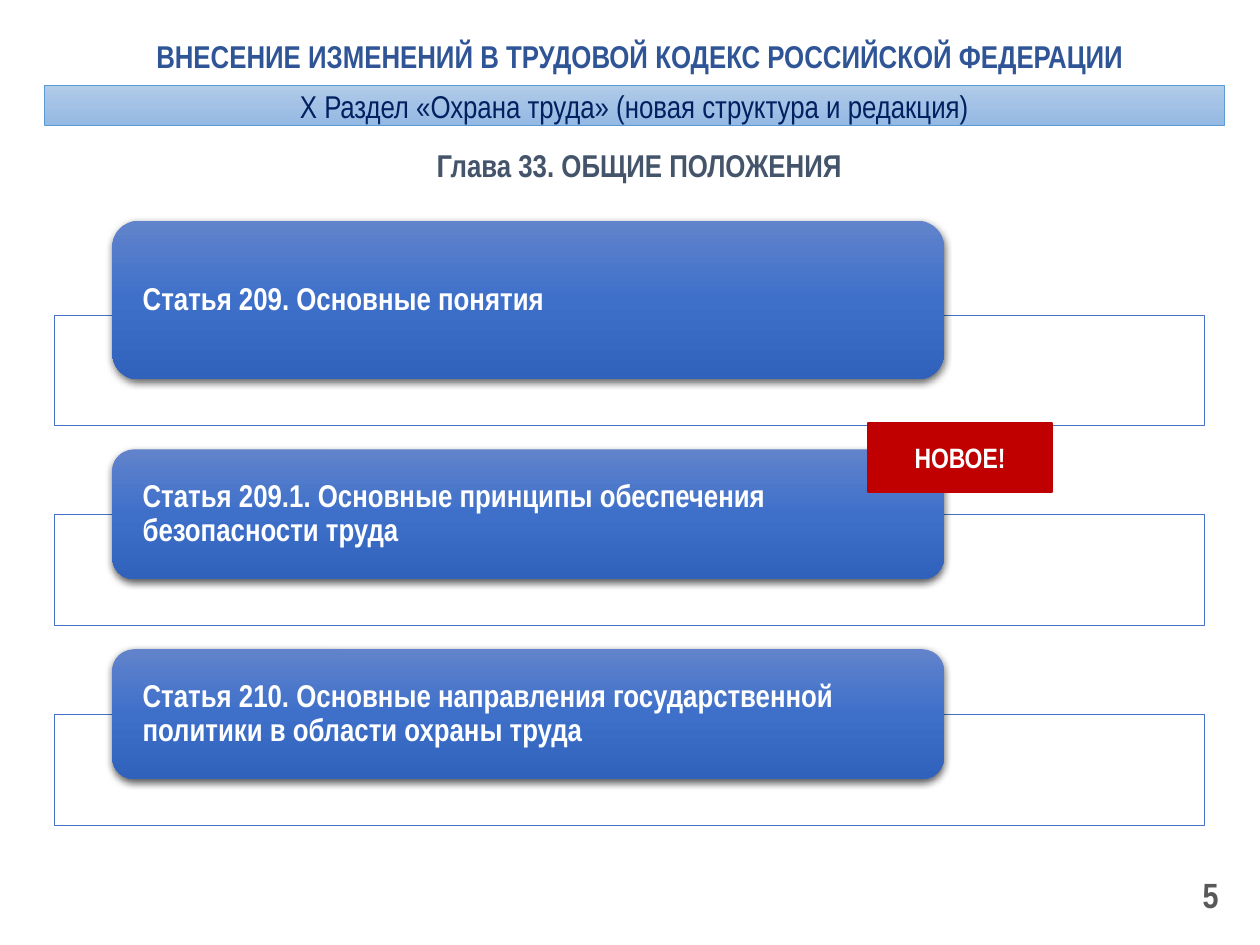
import copy
from dataclasses import dataclass

import pptx
import pptx.dml.color
import pptx.enum.shapes
import pptx.enum.text
import pptx.oxml
import pptx.oxml.ns
import pptx.util

Pt = pptx.util.Pt
RGB = pptx.dml.color.RGBColor.from_string
Shape = pptx.enum.shapes.MSO_SHAPE
Align = pptx.enum.text.PP_ALIGN
Anchor = pptx.enum.text.MSO_ANCHOR
qn = pptx.oxml.ns.qn


@dataclass(frozen=True)
class Theme:
    font: str = "Arial Narrow"
    title: str = "2F5597"
    section: str = "002060"
    chapter: str = "44546A"
    number: str = "595959"
    white: str = "FFFFFF"
    new: str = "C00000"
    frame_line: str = "4472C4"
    band_line: str = "5B9BD5"
    card_fill: tuple = ("6183CB", "3E70CA", "3062BB")
    band_fill: tuple = ("B1CBE9", "A3C1E5", "93B9E4")
    text_size: int = 18
    badge_size: int = 16
    number_size: int = 20


THEME = Theme()
ARTICLES = [
    ("Статья 209. Основные понятия", 90.7),
    ("Статья 209.1. Основные принципы обеспечения безопасности труда", 74.2),
    ("Статья 210. Основные направления государственной политики "
     "в области охраны труда", 74.2),
]


def lengths(box):
    return [Pt(value) for value in box]


def write(shape, text, color, size=THEME.text_size, align=Align.CENTER, bold=True):
    frame = shape.text_frame
    frame.word_wrap = True
    frame.auto_size = pptx.enum.text.MSO_AUTO_SIZE.NONE
    frame.vertical_anchor = Anchor.MIDDLE
    frame.text = text
    para = frame.paragraphs[0]
    para.alignment = align
    para.font.name = THEME.font
    para.font.size = Pt(size)
    para.font.bold = bold
    para.font.color.rgb = RGB(color)
    return para


def add_label(page, box, text, color, **style):
    write(page.shapes.add_textbox(*lengths(box)), text, color, **style)


def add_block(page, kind, box, fill=None, line=None, weight=0.5):
    shape = page.shapes.add_shape(kind, *lengths(box))
    shape.shadow.inherit = False
    if fill:
        shape.fill.solid()
        shape.fill.fore_color.rgb = RGB(fill)
    if line:
        shape.line.color.rgb = RGB(line)
        shape.line.width = Pt(weight)
    else:
        shape.line.fill.background()
    return shape


def fill_downwards(shape, colors):
    """Blend three colours from top to bottom."""
    shape.fill.gradient()
    shape.fill.gradient_angle = 270
    stops = shape._element.spPr.find(".//" + qn("a:gsLst"))
    stops.insert(1, copy.deepcopy(stops[0]))
    for stop, position, color in zip(shape.fill.gradient_stops, (0, 0.5, 1), colors):
        stop.position = position
        stop.color.rgb = RGB(color)


def add_soft_shadow(shape):
    effects = shape._element.spPr.find(qn("a:effectLst"))
    effects.append(pptx.oxml.parse_xml(
        f'<a:outerShdw {pptx.oxml.ns.nsdecls("a")} blurRad="{Pt(4.5)}" '
        f'dist="{Pt(1.5)}" dir="5400000" algn="ctr" rotWithShape="0">'
        '<a:srgbClr val="000000"><a:alpha val="63000"/></a:srgbClr></a:outerShdw>'))


def add_heading(page, box):
    left, top, width, height = box
    title = page.shapes.title
    title.left, title.top, title.width, title.height = lengths(
        (left + 34.5, top, 612, 45.4))
    write(title, "ВНЕСЕНИЕ ИЗМЕНЕНИЙ В ТРУДОВОЙ КОДЕКС РОССИЙСКОЙ ФЕДЕРАЦИИ",
          THEME.title)

    band = add_block(page, Shape.RECTANGLE, (left, top + 39.6, width, 22.6),
                     line=THEME.band_line)
    fill_downwards(band, THEME.band_fill)
    write(band, "Х Раздел «Охрана труда» (новая структура и редакция)",
          THEME.section, bold=False)

    add_label(page, (left + 39.5, top + height - 33.8, 601.2, 33.8),
              "Глава 33. ОБЩИЕ ПОЛОЖЕНИЯ", THEME.chapter)


def add_article(page, box, text, card_height):
    """A frame with a card that rises above its top edge."""
    left, top, width, height = box
    add_block(page, Shape.RECTANGLE, box, THEME.white, THEME.frame_line)
    card = add_block(page, Shape.ROUNDED_RECTANGLE,
                     (left + 33.2, top + 36.8 - card_height, 475.2, card_height))
    fill_downwards(card, THEME.card_fill)
    add_soft_shadow(card)
    write(card, text, THEME.white, align=Align.LEFT).line_spacing = 0.9
    # A rounded shape already insets its text by a part of the corner radius.
    corner_inset = 0.29 * card.adjustments[0] * card_height
    frame = card.text_frame
    frame.margin_left = frame.margin_right = Pt(17.3 - corner_inset)
    frame.margin_top = frame.margin_bottom = 0


def add_article_list(page, box):
    left, top, width, height = box
    frame_height = 63.4
    pitch = (height - frame_height) / (len(ARTICLES) - 1)
    for index, (text, card_height) in enumerate(ARTICLES):
        add_article(page, (left, top + index * pitch, width, frame_height),
                    text, card_height)


def add_badge(page, box):
    badge = add_block(page, Shape.RECTANGLE, box, THEME.new, THEME.new, 1)
    write(badge, "НОВОЕ!", THEME.white, size=THEME.badge_size)


def main():
    deck = pptx.Presentation()
    deck.slide_width, deck.slide_height = Pt(720), Pt(540)
    page = deck.slides.add_slide(deck.slide_layouts.get_by_name("Title Only"))
    add_heading(page, (25.2, 9.4, 674.6, 101.5))
    add_article_list(page, (31, 180, 657.4, 291.8))
    add_badge(page, (496, 241.6, 105.2, 39.6))
    add_label(page, (535.7, 496.8, 167.8, 28.8), "5", THEME.number,
              size=THEME.number_size, align=Align.RIGHT)
    deck.save("out.pptx")


if __name__ == "__main__":
    main()
